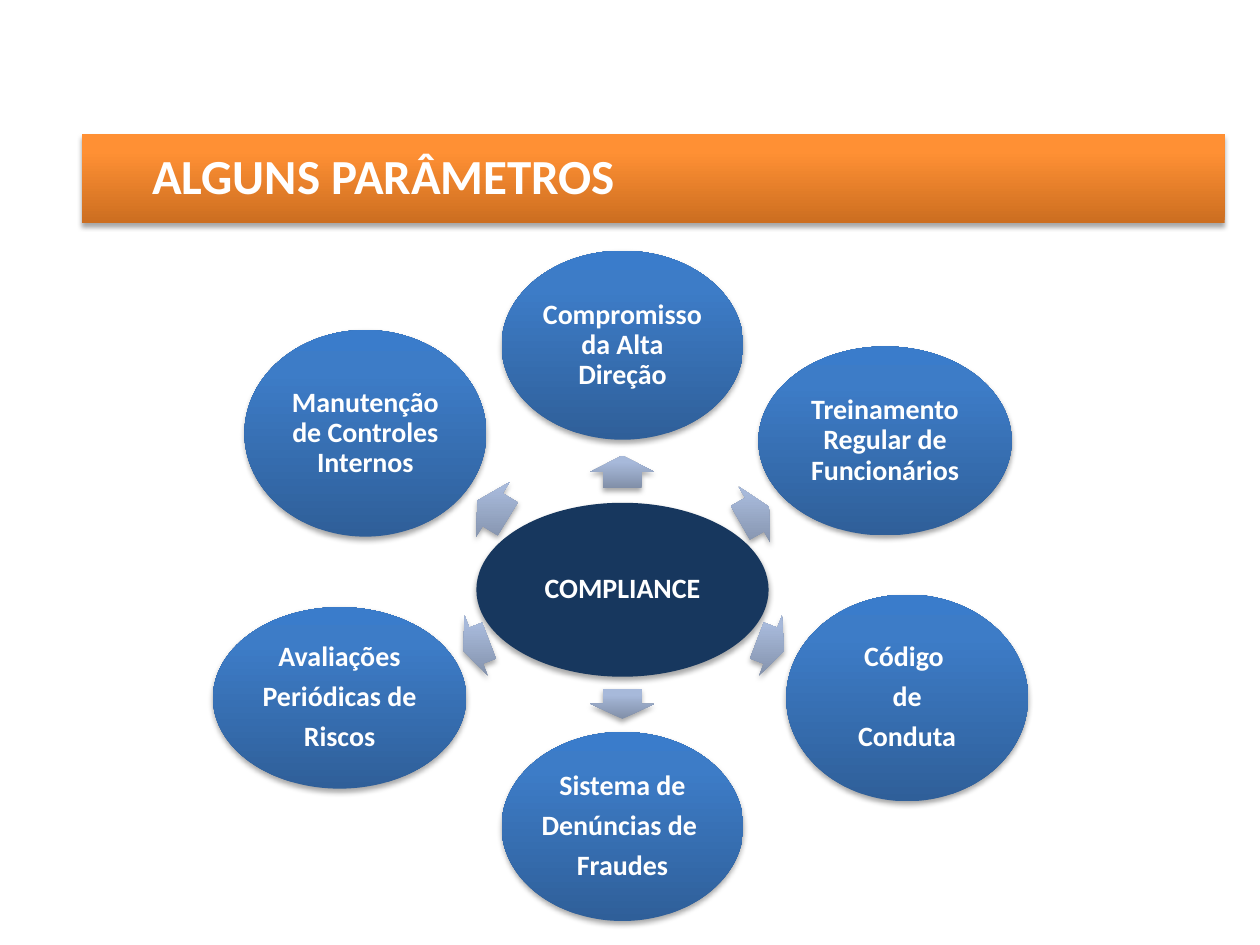
import pptx
import pptx.util
import pptx.dml.color
import pptx.enum.shapes
import pptx.enum.text
import pptx.oxml
import pptx.oxml.ns

Pt = pptx.util.Pt
MSO_SHAPE = pptx.enum.shapes.MSO_SHAPE
PP_ALIGN = pptx.enum.text.PP_ALIGN
qn = pptx.oxml.ns.qn

COLORS = {
    "white": "FFFFFF",
    "hub": "17375E",
    "shadow": "000000",
}
GRADIENTS = {
    "banner": ("CC6E20", "FF9034", "FF9136"),
    "topic": ("2F5F99", "3D7CC7", "3A7CCB"),
    "arrow": ("818FA8", "A7B9DA", "A7BADC"),
}
STOPS = (0, 80000, 100000)
NS = pptx.oxml.ns.nsdecls("a")

# Topic lines, ellipse box, arrow box, arrow rotation; clockwise from the top
TOPICS = [
    (["Compromisso da Alta Direção"],
     (286.6, 143.3, 138.2, 108), (346.3, 251.3, 18.7, 36.7), 270),
    (["Treinamento Regular de Funcionários"],
     (433.4, 198, 144.7, 108), (421.9, 275.8, 18.7, 36.7), 330.6),
    (["Código ", "de", "Conduta"],
     (449.3, 339.8, 138.2, 118.1), (432, 350.6, 16.6, 36.7), 20.9),
    (["Sistema de", "Denúncias de ", "Fraudes"],
     (286.6, 418.3, 138.2, 108), (347, 383.8, 17.3, 36.7), 90.1),
    (["Avaliações", "Periódicas de", "Riscos"],
     (121.7, 347, 144.7, 103.7), (264.2, 350.6, 15.8, 36.7), 158.9),
    (["Manutenção de Controles Internos"],
     (139.7, 188.6, 138.2, 118.1), (271.4, 272.9, 20.2, 36.7), 211.4),
]


def rgb(name):
    return pptx.dml.color.RGBColor.from_string(COLORS[name])


def add_gradient(shape, name):
    """Fill from bottom to top, whatever the rotation of the shape."""
    shape.fill.gradient()
    shape.fill.gradient_angle = 90
    gradient = shape.element.spPr.find(qn("a:gradFill"))
    gradient.set("rotWithShape", "0")
    stops = gradient.find(qn("a:gsLst"))
    for stop in list(stops):
        stops.remove(stop)
    for position, color in zip(STOPS, GRADIENTS[name]):
        stops.append(pptx.oxml.parse_xml(
            f'<a:gs {NS} pos="{position}"><a:srgbClr val="{color}"/></a:gs>'))


def add_shadow(shape):
    shape.shadow.inherit = False
    shape.element.spPr.find(qn("a:effectLst")).append(pptx.oxml.parse_xml(
        f'<a:outerShdw {NS} blurRad="{Pt(3.1)}" dist="{Pt(1.8)}" '
        f'dir="5400000" rotWithShape="0"><a:srgbClr val="{COLORS["shadow"]}">'
        '<a:alpha val="35000"/></a:srgbClr></a:outerShdw>'))


def add_figure(slide, kind, box, fill):
    """Add a shadowed shape; fill names a gradient or a plain colour."""
    shape = slide.shapes.add_shape(kind, *(Pt(length) for length in box))
    if fill in GRADIENTS:
        add_gradient(shape, fill)
    else:
        shape.fill.solid()
        shape.fill.fore_color.rgb = rgb(fill)
    shape.line.fill.background()
    add_shadow(shape)
    return shape


def write_text(shape, lines, size=16, align=PP_ALIGN.CENTER, inset=1.6,
               left_inset=None):
    frame = shape.text_frame
    frame.word_wrap = True
    frame.vertical_anchor = pptx.enum.text.MSO_ANCHOR.MIDDLE
    frame.margin_top = frame.margin_right = frame.margin_bottom = Pt(inset)
    frame.margin_left = Pt(inset if left_inset is None else left_inset)
    for index, line in enumerate(lines):
        paragraph = frame.add_paragraph() if index else frame.paragraphs[0]
        paragraph.alignment = align
        paragraph.line_spacing = 0.9
        paragraph.space_after = Pt(0.35 * size)
        run = paragraph.add_run()
        run.text = line
        run.font.name = "Calibri"
        run.font.size = Pt(size)
        run.font.bold = True
        run.font.color.rgb = rgb("white")


def add_arrow(slide, box, rotation):
    arrow = add_figure(slide, MSO_SHAPE.RIGHT_ARROW, box, "arrow")
    arrow.adjustments[0] = 0.6
    arrow.adjustments[1] = 0.5
    arrow.rotation = rotation


def add_ellipse(slide, lines, box, fill):
    write_text(add_figure(slide, MSO_SHAPE.OVAL, box, fill), lines)


def add_banner(slide, title):
    banner = add_figure(slide, MSO_SHAPE.RECTANGLE,
                        (46.8, 76.3, 653, 51.1), "banner")
    write_text(banner, [title], size=28, align=PP_ALIGN.LEFT, inset=5.6,
               left_inset=40.3)


def main():
    presentation = pptx.Presentation()
    presentation.slide_width = Pt(720)
    presentation.slide_height = Pt(540)
    slide = presentation.slides.add_slide(presentation.slide_layouts[6])

    add_ellipse(slide, ["COMPLIANCE"], (272.2, 287.3, 167, 99.4), "hub")
    for lines, topic_box, arrow_box, rotation in TOPICS:
        add_arrow(slide, arrow_box, rotation)
        add_ellipse(slide, lines, topic_box, "topic")
    add_banner(slide, "ALGUNS PARÂMETROS")

    presentation.save("out.pptx")


if __name__ == "__main__":
    main()
